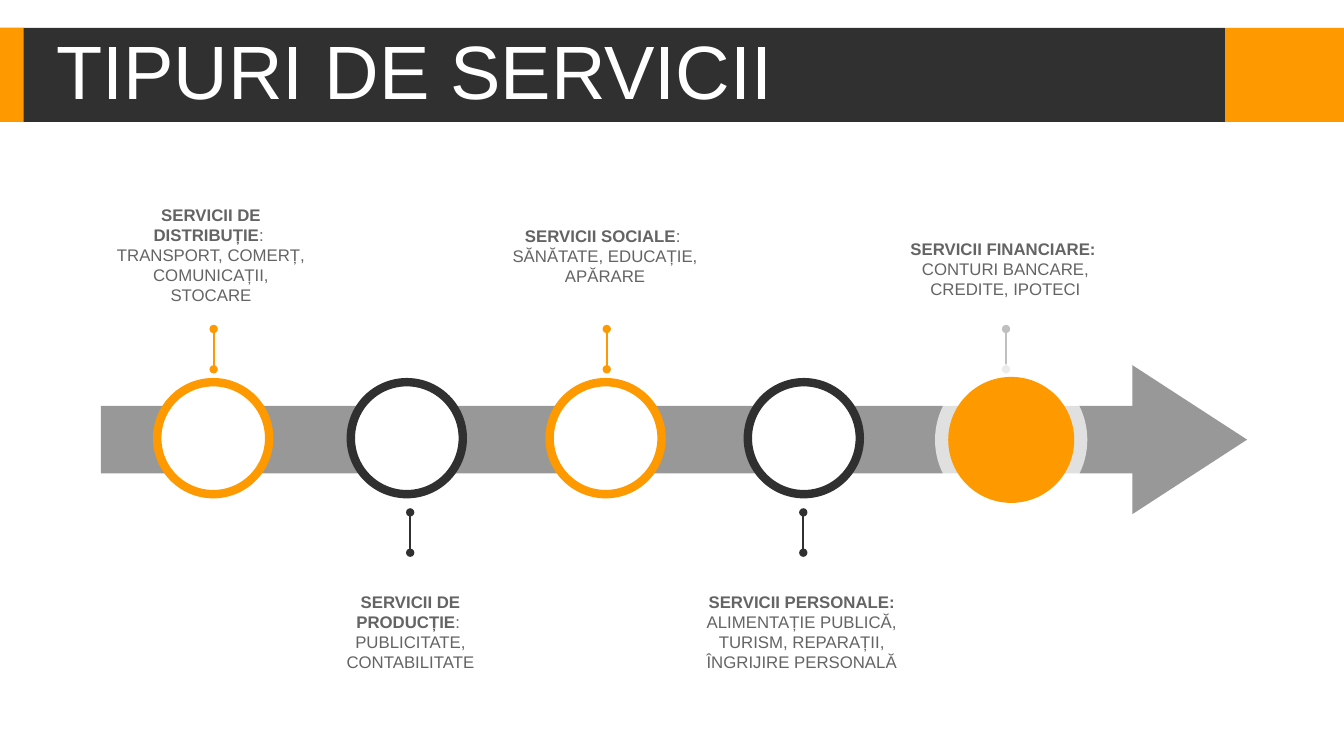
import pptx
import pptx.util
import pptx.dml.color
import pptx.enum.shapes
import pptx.enum.text
import pptx.oxml.ns
from lxml import etree

Pt = pptx.util.Pt
RGBColor = pptx.dml.color.RGBColor
Shape = pptx.enum.shapes.MSO_SHAPE
Align = pptx.enum.text.PP_ALIGN
qn = pptx.oxml.ns.qn

ORANGE = RGBColor(0xFE, 0x99, 0x00)
DARK = RGBColor(0x30, 0x30, 0x30)
ARROW_GRAY = RGBColor(0x98, 0x98, 0x98)
PIN_GRAY = RGBColor(0xBF, 0xBF, 0xBF)
TEXT_GRAY = RGBColor(0x64, 0x64, 0x64)
WHITE = RGBColor(0xFF, 0xFF, 0xFF)

TITLE = "TIPURI DE SERVICII"
BARS = [(875, 85, ORANGE), (0, 875, DARK), (0, 17, ORANGE)]

# heading, heading ending, details, caption left, caption top, caption height, pin x, pin top, pin colour
SERVICES = [
    ("SERVICII DE DISTRIBUȚIE", ": ", "TRANSPORT, COMERȚ, COMUNICAȚII, STOCARE",
     72, 142.5, 80, 152.6, 235, ORANGE),
    ("SERVICII DE PRODUCȚIE", ": ", "PUBLICITATE, CONTABILITATE",
     214.5, 419, 65.5, 293, 366, DARK),
    ("SERVICII SOCIALE", ": ", "SĂNĂTATE, EDUCAȚIE, APĂRARE",
     353.5, 157.5, 51, 433.4, 235, ORANGE),
    ("SERVICII PERSONALE:", "", "ALIMENTAȚIE PUBLICĂ, TURISM, REPARAȚII, ÎNGRIJIRE PERSONALĂ",
     494, 419, 65.5, 573.8, 366, DARK),
    ("SERVICII FINANCIARE: ", "", "CONTURI BANCARE, CREDITE, IPOTECI",
     639.5, 167, 51, 718.6, 235, PIN_GRAY),
]
RINGS = [(112.3, ORANGE), (250.6, DARK), (392.6, ORANGE), (534.2, DARK)]
RING_TOP, RING_SIZE = 273, 80
CAPTION_WIDTH = 157.5
PIN_LENGTH = 28.8
FINAL_CENTER = (722.3, 314.2)
HALO_SIZE, DISC_SIZE = 108.8, 90

deck = pptx.Presentation()
deck.slide_width, deck.slide_height = Pt(960), Pt(540)
page = deck.slides.add_slide(deck.slide_layouts[5])


def add_figure(kind, left, top, width, height, fill, line=None):
    figure = page.shapes.add_shape(kind, Pt(left), Pt(top), Pt(width), Pt(height))
    figure.shadow.inherit = False
    figure.fill.solid()
    figure.fill.fore_color.rgb = fill
    if line is None:
        figure.line.fill.background()
    else:
        figure.line.color.rgb = line
        figure.line.width = Pt(6)
    return figure


def style_span(span, size, color, bold=False):
    span.font.name = "Arial"
    span.font.size = Pt(size)
    span.font.color.rgb = color
    span.font.bold = bold


def add_title():
    title = page.shapes.title
    title.left, title.top, title.width, title.height = Pt(33), Pt(25), Pt(698), Pt(57)
    frame = title.text_frame
    frame.text = TITLE
    frame.auto_size = pptx.enum.text.MSO_AUTO_SIZE.NONE
    frame.vertical_anchor = pptx.enum.text.MSO_ANCHOR.MIDDLE
    para = frame.paragraphs[0]
    para.alignment = Align.LEFT
    para.line_spacing = 0.9
    style_span(para.runs[0], 54, WHITE)
    title.element.getparent().append(title.element)


def add_caption(heading, ending, details, left, top, height):
    box = page.shapes.add_textbox(Pt(left), Pt(top), Pt(CAPTION_WIDTH), Pt(height))
    frame = box.text_frame
    frame.word_wrap = True
    frame.auto_size = pptx.enum.text.MSO_AUTO_SIZE.SHAPE_TO_FIT_TEXT
    lines = [[(heading, True), (ending, False)], [(details, False)]]
    for number, pieces in enumerate(lines):
        para = frame.add_paragraph() if number else frame.paragraphs[0]
        para.alignment = Align.CENTER
        for words, bold in pieces:
            if words:
                span = para.add_run()
                span.text = words
                style_span(span, 12, TEXT_GRAY, bold)


def add_pin(x, top, color):
    pin = page.shapes.add_connector(
        pptx.enum.shapes.MSO_CONNECTOR.STRAIGHT, Pt(x), Pt(top + PIN_LENGTH), Pt(x), Pt(top))
    pin.line.color.rgb = color
    pin.line.width = Pt(1.5)
    outline = pin.line._get_or_add_ln()
    for end in ("a:headEnd", "a:tailEnd"):
        etree.SubElement(outline, qn(end), type="oval")
    etree.SubElement(outline.getparent(), qn("a:effectLst"))


def add_final_circle(size, fill):
    x, y = FINAL_CENTER
    return add_figure(Shape.OVAL, x - size / 2, y - size / 2, size, size, fill)


for left, width, color in BARS:
    add_figure(Shape.RECTANGLE, left, 20, width, 67, color)
add_title()

arrow = add_figure(Shape.RIGHT_ARROW, 72, 260.8, 818.8, 106.5, ARROW_GRAY)
arrow.adjustments[0], arrow.adjustments[1] = 0.453, 0.77

for left, color in RINGS:
    add_figure(Shape.OVAL, left, RING_TOP, RING_SIZE, RING_SIZE, WHITE, color)

for heading, ending, details, left, top, height, pin_x, pin_top, color in SERVICES:
    add_caption(heading, ending, details, left, top, height)
    add_pin(pin_x, pin_top, color)

halo = add_final_circle(HALO_SIZE, WHITE)
halo_color = halo.element.spPr.find(qn("a:solidFill"))[0]
etree.SubElement(halo_color, qn("a:alpha"), val="70000")
add_final_circle(DISC_SIZE, ORANGE)

deck.save("out.pptx")
